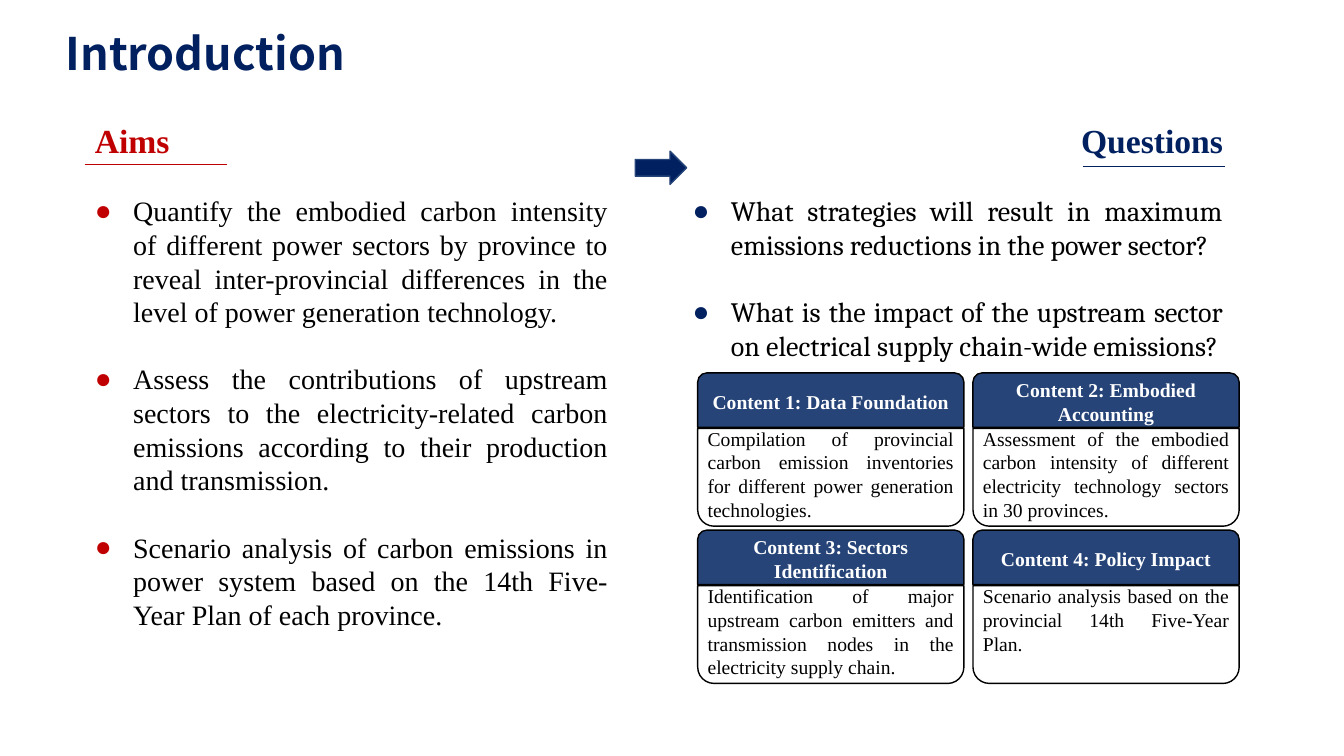
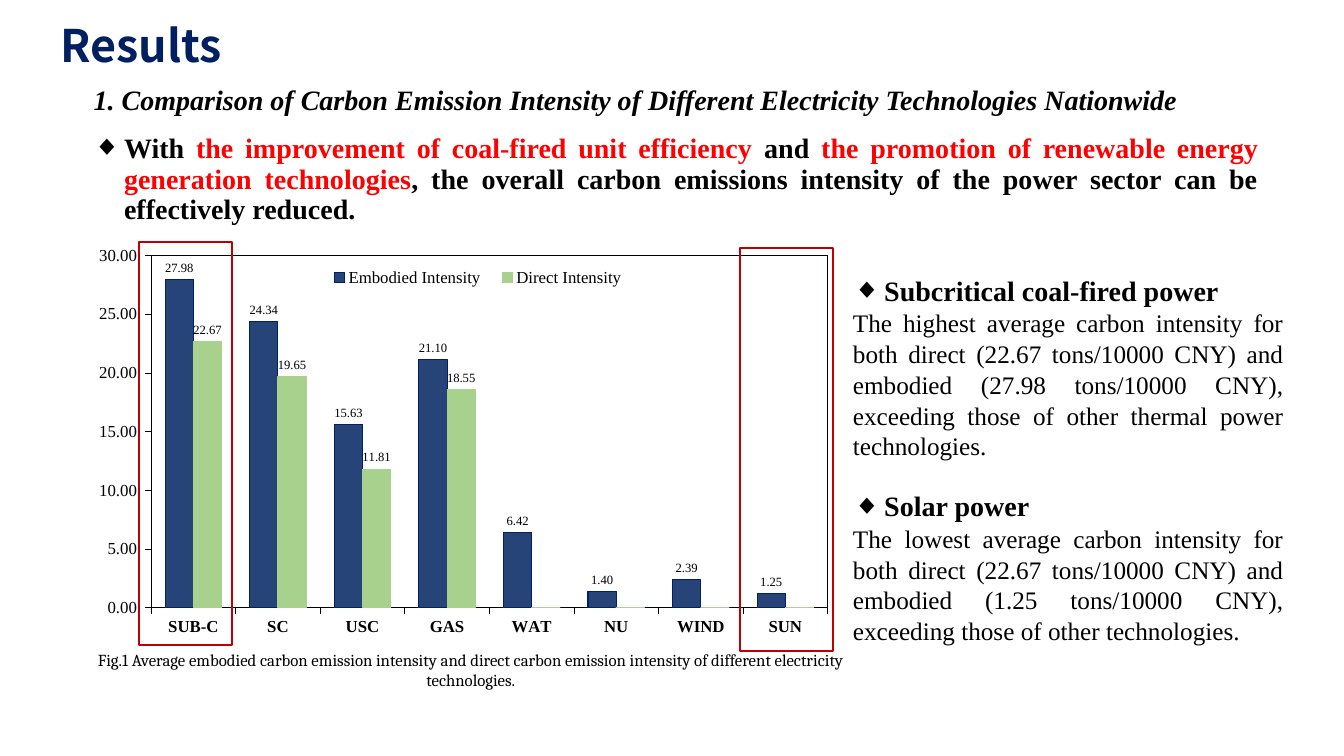
from pptx import Presentation
from pptx.chart.data import CategoryChartData
from pptx.dml.color import RGBColor
from pptx.enum.chart import XL_CHART_TYPE, XL_LABEL_POSITION, XL_LEGEND_POSITION, XL_TICK_MARK
from pptx.enum.shapes import MSO_CONNECTOR, MSO_SHAPE
from pptx.enum.text import MSO_ANCHOR, MSO_AUTO_SIZE, PP_ALIGN
from pptx.oxml import parse_xml
from pptx.oxml.ns import nsdecls, qn
from pptx.util import Inches, Pt

NAVY = RGBColor(0x00, 0x20, 0x60)
STEEL = RGBColor(0x26, 0x44, 0x78)
GREEN = RGBColor(0xA9, 0xD1, 0x8E)
CRIMSON = RGBColor(0xC0, 0x00, 0x00)
RED = RGBColor(0xFF, 0x00, 0x00)
BLACK = RGBColor(0x00, 0x00, 0x00)
WHITE = RGBColor(0xFF, 0xFF, 0xFF)

LEFT, MID, RIGHT, JUST = PP_ALIGN.LEFT, PP_ALIGN.CENTER, PP_ALIGN.RIGHT, PP_ALIGN.JUSTIFY
TOP, CENTRE, BOTTOM = MSO_ANCHOR.TOP, MSO_ANCHOR.MIDDLE, MSO_ANCHOR.BOTTOM
CARD, ARROW, RECT = MSO_SHAPE.ROUND_2_SAME_RECTANGLE, MSO_SHAPE.RIGHT_ARROW, MSO_SHAPE.RECTANGLE
STRAIGHT = MSO_CONNECTOR.STRAIGHT
OUT_END = XL_LABEL_POSITION.OUTSIDE_END

SERIF, SLAB, SANS = "Times New Roman", "Cambria", "Noto Sans CJK SC"


def write(frame, parts, align=LEFT, pitch=None, gap=0, mark=None, tint=BLACK,
          dent=0.0, ink=BLACK, **font):
    """Add a paragraph; parts is a text or a list of (text, colour) runs."""
    frame.word_wrap = True
    frame.auto_size = MSO_AUTO_SIZE.NONE
    para = frame.paragraphs[0] if not frame.text else frame.add_paragraph()
    para.alignment, para.line_spacing = align, pitch
    para.space_before, para.space_after = Pt(gap), Pt(0)
    for text, hue in [(parts, ink)] if isinstance(parts, str) else parts:
        run = para.add_run()
        run.text = text
        run.font.color.rgb = hue
        for key, value in {"name": SERIF, "bold": False, **font}.items():
            setattr(run.font, key, value)
    props = para._p.get_or_add_pPr()
    props.set("marL", str(Inches(dent)))
    props.set("indent", str(-Inches(dent)))
    if mark:
        props.append(parse_xml(f'<a:buClr {nsdecls("a")}><a:srgbClr val="{tint}"/></a:buClr>'))
        props.append(parse_xml(f'<a:buChar {nsdecls("a")} char="{mark}"/>'))
    else:
        props.append(parse_xml(f'<a:buNone {nsdecls("a")}/>'))


def paint(shape, fill, line, width=1):
    shape.shadow.inherit = False
    if fill is None:
        shape.fill.background()
    else:
        shape.fill.solid()
        shape.fill.fore_color.rgb = fill
    shape.line.color.rgb = line
    shape.line.width = Pt(width)


deck = Presentation()
deck.slide_width, deck.slide_height = Inches(13.33), Inches(7.5)
layout = deck.slide_layouts[3]  # title and two bodies

# Titles and body frames of both slides
pages = []
for title, spots in (
    ("Introduction", ((0.55, 0.15, 4.52, 0.69), (0.84, 1.14, 5.29, 5.55), (6.77, 1.14, 5.46, 2.52))),
    ("Results", ((0.5, 0.07, 9.9, 0.69), (0.82, 1.27, 11.76, 1.03), (8.36, 2.69, 4.47, 3.79))),
):
    page = deck.slides.add_slide(layout)
    for holder, spot in zip(page.placeholders, spots):
        holder.left, holder.top, holder.width, holder.height = map(Inches, spot)
        holder.text_frame.vertical_anchor = TOP
    head = page.shapes.title.text_frame
    head.vertical_anchor = BOTTOM
    write(head, title, pitch=1.5, ink=NAVY, name=SANS, size=Pt(32), bold=True)
    pages.append(page)
intro, results = pages

# Introduction: aims and questions
columns = (
    (1, "Aims", LEFT, CRIMSON, SERIF, (0.84, 1.63), (
        "Quantify the embodied carbon intensity of different power sectors by province to reveal "
        "inter-provincial differences in the level of power generation technology.",
        "Assess the contributions of upstream sectors to the electricity-related carbon emissions "
        "according to their production and transmission.",
        "Scenario analysis of carbon emissions in power system based on the 14th Five-Year Plan "
        "of each province.")),
    (2, "Questions", RIGHT, NAVY, SLAB, (10.74, 1.65), (
        "What strategies will result in maximum emissions reductions in the power sector?",
        "What is the impact of the upstream sector on electrical supply chain-wide emissions?")),
)
for slot, name, side, hue, face, (x, y), items in columns:
    frame = intro.placeholders[slot].text_frame
    write(frame, name, side, Pt(28.8), ink=hue, size=Pt(24), bold=True)
    for item in items:
        write(frame, item, JUST, Pt(24), 24, "●", hue, 0.38, name=face, size=Pt(20))
    rule = intro.shapes.add_connector(STRAIGHT, Inches(x), Inches(y), Inches(x + 1.41), Inches(y))
    rule.line.color.rgb = hue
    rule.line.width = Pt(0.5)
    rule._element.spPr.append(parse_xml(f'<a:effectLst {nsdecls("a")}/>'))

arrow = intro.shapes.add_shape(ARROW, Inches(6.3), Inches(1.5), Inches(0.51), Inches(0.33))
paint(arrow, NAVY, STEEL)

# Introduction: two by two content cards
cards = (
    ("Content 1: Data Foundation", "Compilation of provincial carbon emission inventories for "
     "different power generation technologies."),
    ("Content 2: Embodied Accounting", "Assessment of the embodied carbon intensity of different "
     "electricity technology sectors in 30 provinces."),
    ("Content 3: Sectors Identification", "Identification of major upstream carbon emitters and "
     "transmission nodes in the electricity supply chain."),
    ("Content 4: Policy Impact", "Scenario analysis based on the provincial 14th Five-Year Plan."),
)
wide = Inches(2.64)
for i, (name, text) in enumerate(cards):
    row, col = divmod(i, 2)
    x, y = Inches(6.92 + 2.73 * col), 3.7 + 1.56 * row
    group = intro.shapes.add_group_shape().shapes
    band = group.add_shape(CARD, x, Inches(y), wide, Inches(0.54))
    paint(band, STEEL, BLACK)
    band.text_frame.vertical_anchor = CENTRE
    write(band.text_frame, name, MID, ink=WHITE, size=Pt(14), bold=True)
    base = group.add_shape(CARD, x, Inches(y + 0.55), wide, Inches(0.97))
    base.rotation = 180
    paint(base, None, BLACK)
    note = group.add_textbox(x, Inches(y + 0.48), wide, Inches(1.04))
    write(note.text_frame, text, JUST, Pt(17), size=Pt(14))

# Results: subtitle and statement
sub = results.shapes.add_textbox(Inches(0.83), Inches(0.77), Inches(11.67), Inches(0.44))
write(sub.text_frame,
      "1. Comparison of Carbon Emission Intensity of Different Electricity Technologies Nationwide",
      size=Pt(20), bold=True, italic=True)
point = {"align": JUST, "pitch": Pt(22), "mark": "◆", "dent": 0.31, "size": Pt(20), "bold": True}
write(results.placeholders[1].text_frame, [
    ("With ", BLACK),
    ("the improvement of coal-fired unit efficiency ", RED),
    ("and ", BLACK),
    ("the promotion of renewable energy generation technologies", RED),
    (", the overall carbon emissions intensity of the power sector can be effectively reduced.", BLACK),
], **point)

# Results: findings
side = results.placeholders[2].text_frame
for gap, name, text in (
    (0, "Subcritical coal-fired power",
     "The highest average carbon intensity for both direct (22.67 tons/10000 CNY) and embodied "
     "(27.98 tons/10000 CNY), exceeding those of other thermal power technologies."),
    (22, "Solar power",
     "The lowest average carbon intensity for both direct (22.67 tons/10000 CNY) and embodied "
     "(1.25 tons/10000 CNY), exceeding those of other technologies."),
):
    write(side, name, gap=gap, **point)
    write(side, text, JUST, Pt(22), size=Pt(18))

# Results: chart
data = CategoryChartData()
data.categories = ["SUB-C", "SC", "USC", "GAS", "WAT", "NU", "WIND", "SUN"]
data.add_series("Embodied Intensity", (27.98, 24.34, 15.63, 21.1, 6.42, 1.4, 2.39, 1.25))
data.add_series("Direct Intensity", (22.67, 19.65, 11.81, 18.55, 0, 0, 0, 0))
chart = results.shapes.add_chart(XL_CHART_TYPE.COLUMN_CLUSTERED, Inches(0.82), Inches(2.36),
                                 Inches(7.54), Inches(4.37), data).chart
chart.has_title = False
chart.has_legend = True
legend = chart.legend
legend.position = XL_LEGEND_POSITION.BOTTOM
legend.include_in_layout = False
plot = chart.plots[0]
plot.gap_width, plot.overlap, plot.vary_by_categories = 100, 0, False

cats, vals = chart.category_axis, chart.value_axis
vals.minimum_scale, vals.maximum_scale, vals.major_unit = 0, 30, 5
vals.has_major_gridlines = False
vals.tick_labels.number_format = r"0.00_);[Red]\(0.00\)"  # pads the labels off the frame
vals.tick_labels.number_format_is_linked = False
for axis in (cats, vals):
    axis.major_tick_mark = XL_TICK_MARK.OUTSIDE
    axis.format.line.color.rgb = BLACK
    axis.format.line.width = Pt(0.5)

fonts = [(cats.tick_labels.font, 12, True), (vals.tick_labels.font, 12, False),
         (legend.font, 12, False)]
for series, fill, edge in zip(plot.series, (STEEL, GREEN), (NAVY, GREEN)):
    series.format.fill.solid()
    series.format.fill.fore_color.rgb = fill
    series.format.line.color.rgb = edge
    series.format.line.width = Pt(0.75)
    series.invert_if_negative = False
    labels = series.data_labels
    labels.show_value = True
    labels.position = OUT_END
    labels.number_format = "0.00;;"  # zeros stay blank
    labels.number_format_is_linked = False
    fonts.append((labels.font, 9, False))
for font, size, bold in fonts:
    font.name, font.size, font.bold = SERIF, Pt(size), bold
    font.color.rgb = BLACK

area = chart._chartSpace.chart.plotArea
for part, index, target, spot in (
    (area, 0, '<c:layoutTarget val="inner"/>', (0.09, 0.04, 0.89, 0.8)),
    (legend._element, 1, "", (0.31, 0.06, 0.42, 0.06)),
):
    for old in part.findall(qn("c:layout")):
        part.remove(old)
    modes = "".join(f'<c:{key}Mode val="edge"/>' for key in "xy")
    sizes = "".join(f'<c:{key} val="{value}"/>' for key, value in zip("xywh", spot))
    part.insert(index, parse_xml(
        f'<c:layout {nsdecls("c")}><c:manualLayout>{target}{modes}{sizes}</c:manualLayout></c:layout>'))
area.append(parse_xml(
    f'<c:spPr {nsdecls("c", "a")}><a:noFill/><a:ln w="{Pt(0.75)}"><a:solidFill>'
    f'<a:srgbClr val="{BLACK}"/></a:solidFill></a:ln></c:spPr>'))

# Results: caption and frames round the two extremes
fig = results.shapes.add_textbox(Inches(0.5), Inches(6.4), Inches(8.34), Inches(0.5))
write(fig.text_frame,
      "Fig.1 Average embodied carbon emission intensity and direct carbon emission intensity "
      "of different electricity technologies.", MID, name=SLAB, size=Pt(12))
for x, y in ((1.38, 2.4), (7.34, 2.46)):
    frame = results.shapes.add_shape(RECT, Inches(x), Inches(y), Inches(0.92), Inches(4))
    paint(frame, None, CRIMSON)

deck.save("out.pptx")
